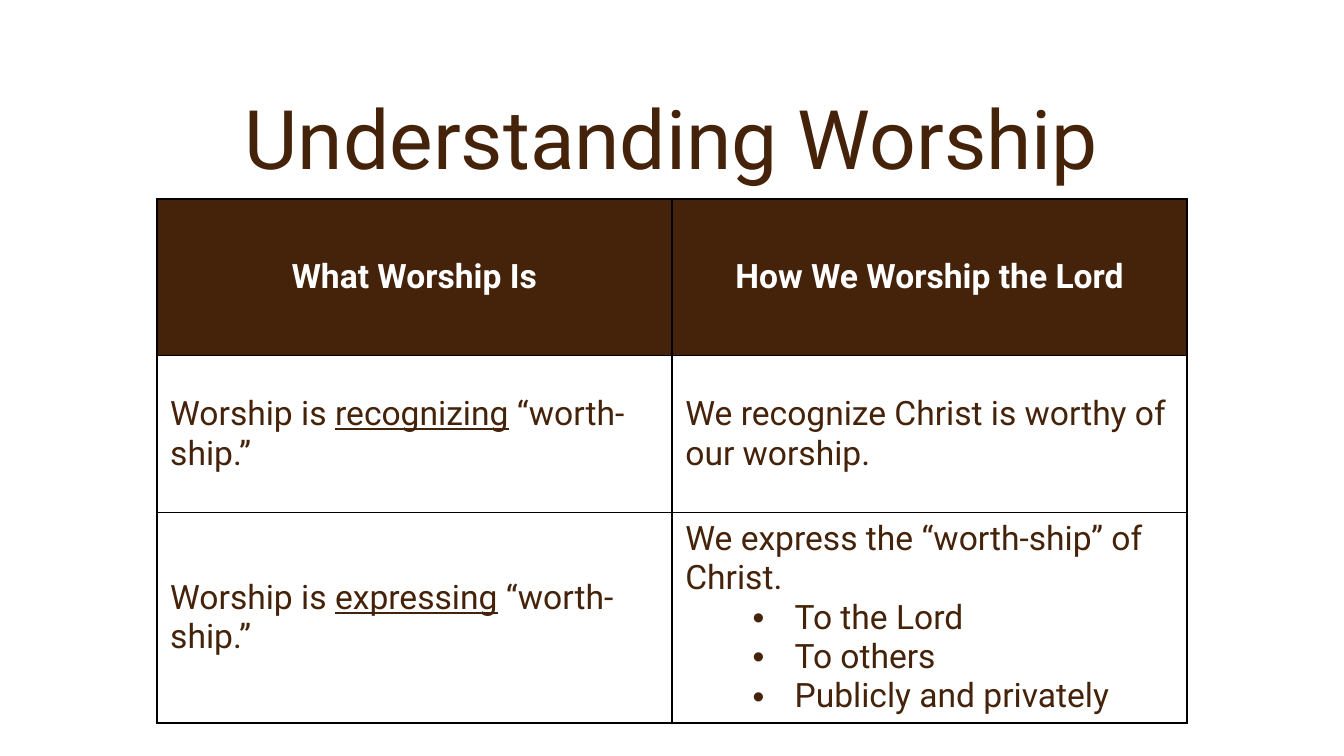
from dataclasses import dataclass

import lxml.etree
import pptx
import pptx.dml.color
import pptx.enum.text
import pptx.oxml.ns
import pptx.util

PX = 9525  # EMU per px, 96 px to the inch
FONT = "Roboto"
BROWN, WHITE, BLACK = "45230A", "FFFFFF", "000000"
ROW_H, COL_W = 112, 368
THICK, THIN = 1.0, 0.5  # border widths in points
PP_ALIGN = pptx.enum.text.PP_ALIGN
MIDDLE = pptx.enum.text.MSO_ANCHOR.MIDDLE


@dataclass
class Run:
    text: str
    underline: bool = False


@dataclass
class Para:
    runs: list[Run]
    bullet: bool = False


def px(n: int) -> pptx.util.Emu:
    return pptx.util.Emu(n * PX)


def rgb(color: str) -> pptx.dml.color.RGBColor:
    return pptx.dml.color.RGBColor.from_string(color)


def plain(text: str, bullet: bool = False) -> Para:
    return Para([Run(text)], bullet)


def definition(verb: str) -> Para:
    return Para([Run("Worship is "), Run(verb, True), Run(" “worth-ship.”")])


def add_run(p, run: Run, size: int, color: str, bold: bool = False) -> None:
    r = p.add_run()
    r.text = run.text
    r.font.name = FONT
    r.font.size = pptx.util.Pt(size)
    r.font.bold = bold
    r.font.underline = run.underline
    r.font.color.rgb = rgb(color)


def add_bullet(p) -> None:
    p.level = 1
    pPr = p._p.get_or_add_pPr()
    pPr.set("marL", str(px(78)))
    pPr.set("indent", str(px(-30)))
    qn = pptx.oxml.ns.qn
    lxml.etree.SubElement(pPr, qn("a:buFont")).set("typeface", "Arial")
    lxml.etree.SubElement(pPr, qn("a:buChar")).set("char", "•")


def set_borders(cell, widths: dict[str, float]) -> None:
    qn = pptx.oxml.ns.qn
    tcPr = cell._tc.get_or_add_tcPr()
    for i, (side, width) in enumerate(widths.items()):
        ln = lxml.etree.Element(qn(f"a:ln{side}"), w=str(pptx.util.Pt(width)))
        fill = lxml.etree.SubElement(ln, qn("a:solidFill"))
        lxml.etree.SubElement(fill, qn("a:srgbClr")).set("val", BLACK)
        tcPr.insert(i, ln)


def fill_cell(cell, paras: list[Para], header: bool) -> None:
    cell.vertical_anchor = MIDDLE
    if header:
        cell.fill.solid()
        cell.fill.fore_color.rgb = rgb(BROWN)
    else:
        cell.fill.background()
    tf = cell.text_frame
    for i, para in enumerate(paras):
        p = tf.add_paragraph() if i else tf.paragraphs[0]
        p.alignment = PP_ALIGN.CENTER if header else PP_ALIGN.LEFT
        if para.bullet:
            add_bullet(p)
        for run in para.runs:
            add_run(p, run, 18, WHITE if header else BROWN, header)


ROWS = [
    [[plain("What Worship Is")], [plain("How We Worship the Lord")]],
    [[definition("recognizing")],
     [plain("We recognize Christ is worthy of our worship.")]],
    [[definition("expressing")],
     [plain("We express the “worth-ship” of Christ."),
      plain("To the Lord", True),
      plain("To others", True),
      plain("Publicly and privately", True)]],
]


def main() -> None:
    prs = pptx.Presentation()
    prs.slide_width, prs.slide_height = px(960), px(540)
    s = prs.slides.add_slide(prs.slide_layouts[5])
    s.background.fill.solid()
    s.background.fill.fore_color.rgb = rgb(WHITE)

    # Title
    sp = s.shapes.title
    sp.left, sp.top, sp.width, sp.height = px(48), px(46), px(864), px(112)
    tf = sp.text_frame
    tf.word_wrap = True
    tf.vertical_anchor = MIDDLE
    p = tf.paragraphs[0]
    p.alignment = PP_ALIGN.CENTER
    p.line_spacing = 0.9
    add_run(p, Run("Understanding Worship"), 44, BROWN)

    # Table; the last row grows to fit its list
    n_rows, n_cols = len(ROWS), len(ROWS[0])
    frame = s.shapes.add_table(n_rows, n_cols, px(112), px(142),
                               px(n_cols * COL_W), px(n_rows * ROW_H))
    table = frame.table
    table.horz_banding = False
    for col in table.columns:
        col.width = px(COL_W)
    for i, row in enumerate(ROWS):
        table.rows[i].height = px(ROW_H)
        for j, paras in enumerate(row):
            cell = table.cell(i, j)
            fill_cell(cell, paras, header=i == 0)
            set_borders(cell, {"L": THICK, "R": THICK,
                               "T": THICK if i == 0 else THIN,
                               "B": THICK if i == n_rows - 1 else THIN})

    prs.save("out.pptx")


if __name__ == "__main__":
    main()
